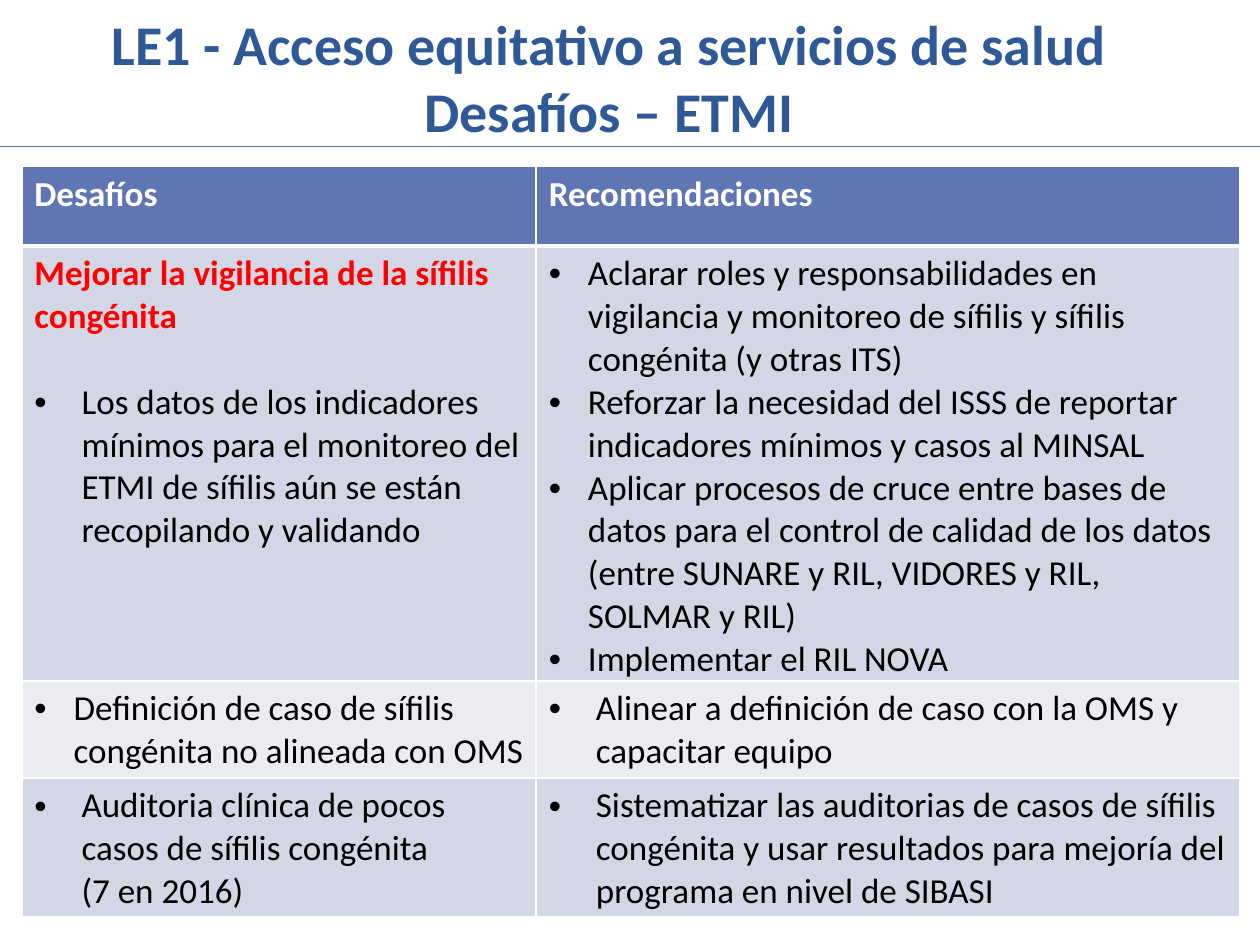
from lxml.etree import SubElement
from pptx import Presentation
from pptx.dml.color import RGBColor
from pptx.enum.shapes import MSO_CONNECTOR
from pptx.enum.text import MSO_ANCHOR, PP_ALIGN
from pptx.oxml.ns import qn
from pptx.util import Cm, Pt

THEME = {
    "font": "Calibri", "title_size": 32, "body_size": 20,
    "title": "2F5897", "rule": "5C72B2", "header": "6076B4",
    "bands": ("D2D6E5", "EAECF2"),
    "white": "FFFFFF", "black": "000000", "alert": "FF0000",
}
TITLE = ("LE1 - Acceso equitativo a servicios de salud", "Desafíos – ETMI")
HEADERS = ("Desafíos", "Recomendaciones")
NARROW, WIDE = 0.79, 0.95  # bullet indents in cm
HIGHLIGHT = "Mejorar la vigilancia de la sífilis congénita"
# Each cell: (bullet indent, bullet texts)
ROWS = [
    ((WIDE, ["Los datos de los indicadores mínimos para el monitoreo del ETMI "
             "de sífilis aún se están recopilando y validando"]),
     (NARROW, ["Aclarar roles y responsabilidades en vigilancia y monitoreo de "
               "sífilis y sífilis congénita (y otras ITS)",
               "Reforzar la necesidad del ISSS de reportar indicadores mínimos "
               "y casos al MINSAL",
               "Aplicar procesos de cruce entre bases de datos para el control "
               "de calidad de los datos (entre SUNARE y RIL, VIDORES y RIL, "
               "SOLMAR y RIL)",
               "Implementar el RIL NOVA"])),
    ((NARROW, ["Definición de caso de sífilis congénita no alineada con OMS"]),
     (WIDE, ["Alinear a definición de caso con la OMS y capacitar equipo"])),
    ((WIDE, ["Auditoria clínica de pocos casos de sífilis congénita\v(7 en 2016)"]),
     (WIDE, ["Sistematizar las auditorias de casos de sífilis congénita y usar "
             "resultados para mejoría del programa en nivel de SIBASI"])),
]
COL_WIDTHS = (10.37, 14.18)
ROW_HEIGHTS = (1.6, 8.71, 1.96, 2.79)


def rgb(name):
    return RGBColor.from_string(THEME.get(name, name))


def add_text(tf, text, size=THEME["body_size"], color="black", bold=False,
             align=PP_ALIGN.LEFT, indent=0, before=0):
    """Fill the first paragraph if it is empty, otherwise append one."""
    p = tf.paragraphs[0]
    if p.runs:
        p = tf.add_paragraph()
    p.text = text
    p.alignment = align
    p.space_before = Pt(before)
    for r in p.runs:
        r.font.name = THEME["font"]
        r.font.size = Pt(size)
        r.font.bold = bold
        r.font.color.rgb = rgb(color)
    if indent:
        pPr = p._p.get_or_add_pPr()
        pPr.set("marL", str(Cm(indent)))
        pPr.set("indent", str(-Cm(indent)))
        SubElement(pPr, qn("a:buFont"), typeface="Arial")
        SubElement(pPr, qn("a:buChar"), char="•")


def style_cell(cell, fill, bottom=1):
    cell.margin_bottom = 0
    tcPr = cell._tc.get_or_add_tcPr()
    for side, width in (("L", 1), ("R", 1), ("T", 1), ("B", bottom)):
        ln = SubElement(tcPr, qn(f"a:ln{side}"), w=str(Pt(width)))
        color = SubElement(ln, qn("a:solidFill"))
        SubElement(color, qn("a:srgbClr"), val=THEME["white"])
    cell.fill.solid()
    cell.fill.fore_color.rgb = rgb(fill)


def add_title(s):
    sp = s.shapes.title
    sp.left, sp.top, sp.width, sp.height = Cm(0), Cm(0.04), Cm(24.56), Cm(3)
    tf = sp.text_frame
    tf.word_wrap = True
    tf.vertical_anchor = MSO_ANCHOR.MIDDLE
    for line in TITLE:
        add_text(tf, line, size=THEME["title_size"], color="title", bold=True,
                 align=PP_ALIGN.CENTER)


def add_rule(s):
    y = Cm(2.96)
    rule = s.shapes.add_connector(MSO_CONNECTOR.STRAIGHT, Cm(-0.08), y, Cm(25.48), y)
    rule.line.color.rgb = rgb("rule")
    rule.line.width = Pt(0.75)
    SubElement(rule._element.spPr, qn("a:effectLst"))


def add_challenges(s):
    table = s.shapes.add_table(len(ROW_HEIGHTS), len(COL_WIDTHS), Cm(0.44), Cm(3.36),
                               Cm(sum(COL_WIDTHS)), Cm(sum(ROW_HEIGHTS))).table
    for col, width in zip(table.columns, COL_WIDTHS):
        col.width = Cm(width)
    for row, height in zip(table.rows, ROW_HEIGHTS):
        row.height = Cm(height)
    for j, header in enumerate(HEADERS):
        cell = table.cell(0, j)
        style_cell(cell, "header", bottom=3)
        add_text(cell.text_frame, header, color="white", bold=True)
    add_text(table.cell(1, 0).text_frame, HIGHLIGHT, color="alert", bold=True)
    for i, row in enumerate(ROWS):
        for j, (indent, items) in enumerate(row):
            cell = table.cell(i + 1, j)
            style_cell(cell, THEME["bands"][i % 2])
            below_highlight = i == j == 0
            for item in items:
                add_text(cell.text_frame, item, indent=indent,
                         before=24.4 if below_highlight else 0)


def main():
    prs = Presentation()
    prs.slide_width, prs.slide_height = Cm(25.4), Cm(19.05)
    s = prs.slides.add_slide(prs.slide_layouts[5])
    add_title(s)
    add_rule(s)
    add_challenges(s)
    prs.save("out.pptx")


if __name__ == "__main__":
    main()
